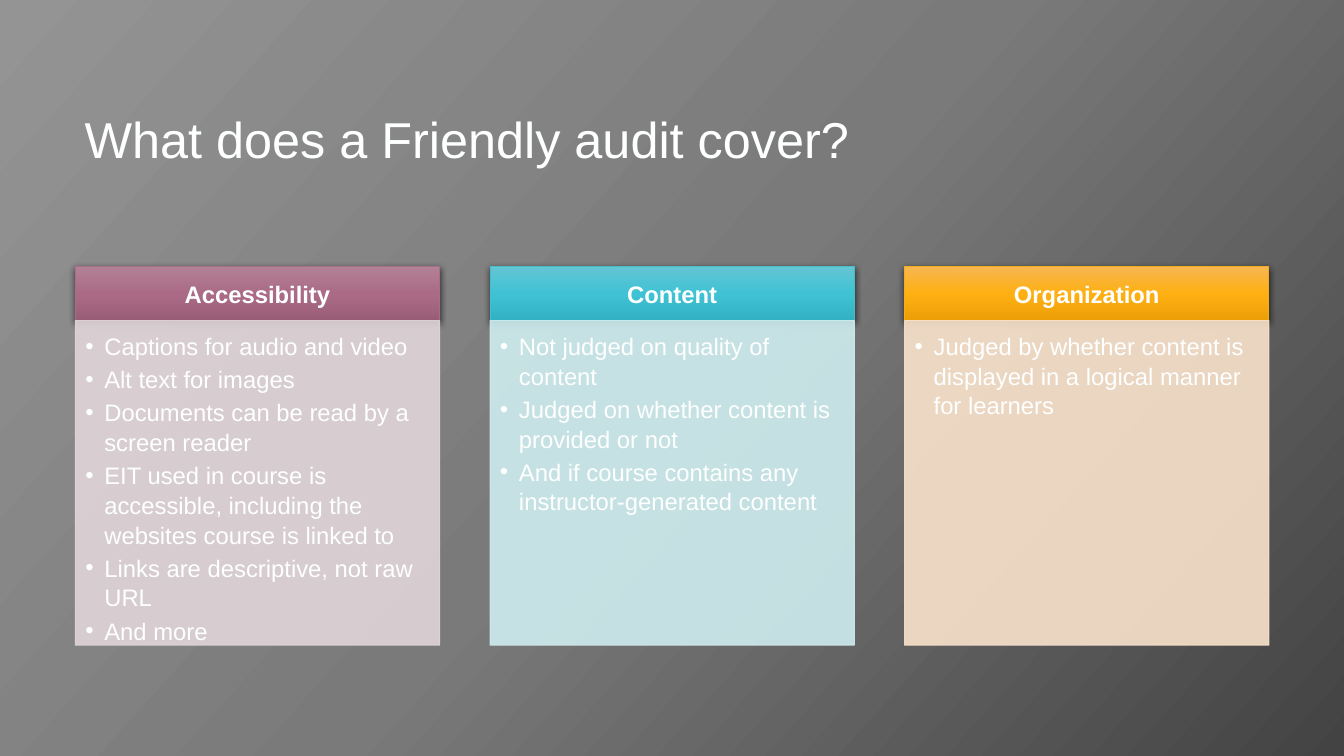
import pptx
import pptx.dml.color
import pptx.enum.shapes
import pptx.enum.text
import pptx.oxml
import pptx.oxml.ns
import pptx.util
from dataclasses import dataclass

Cm, Pt = pptx.util.Cm, pptx.util.Pt
qn = pptx.oxml.ns.qn
Anchor, Align = pptx.enum.text.MSO_ANCHOR, pptx.enum.text.PP_ALIGN

TITLE = "What does a Friendly audit cover?"
COLUMNS = [
    {"heading": "Accessibility",
     "points": ["Captions for audio and video",
                "Alt text for images",
                "Documents can be read by a screen reader",
                "EIT used in course is accessible, including the websites course is linked to",
                "Links are descriptive, not raw URL",
                "And more"],
     "gradient": ("B28195", "AB6B87", "9A5D77"), "edge": "A86E87", "tint": "E1D5D9"},
    {"heading": "Content",
     "points": ["Not judged on quality of content",
                "Judged on whether content is provided or not",
                "And if course contains any instructor-generated content"],
     "gradient": ("64C5D3", "3FC2D4", "32B1C2"), "edge": "46BDCD", "tint": "CFEDEF"},
    {"heading": "Organization",
     "points": ["Judged by whether content is displayed in a logical manner for learners"],
     "gradient": ("F7B652", "FEB012", "EB9F07"), "edge": "F3AC1D", "tint": "FAE3CC"},
]


@dataclass(frozen=True)
class Theme:
    font: str = "Arial"
    text: str = "FEFFFF"
    background: tuple = ("949494", "7A7A7A", "434343")
    title_size: int = 36
    body_size: int = 17
    edge_width: float = 0.75
    tint_opacity: int = 90


THEME = Theme()
LEFT, PITCH, WIDTH = 1.9, 10.45, 9.18
HEADER_TOP, HEADER_HEIGHT, BODY_HEIGHT = 6.72, 1.36, 8.18
BODY_TOP = HEADER_TOP + HEADER_HEIGHT


def rgb(code):
    return pptx.dml.color.RGBColor.from_string(code)


def xml(tag, content="", **attributes):
    settings = "".join(f' {name}="{value}"' for name, value in attributes.items())
    namespace = pptx.oxml.ns.nsdecls("a")
    return pptx.oxml.parse_xml(f"<a:{tag} {namespace}{settings}>{content}</a:{tag}>")


def paint_gradient(fill, element, colours, angle):
    """Spread the colours evenly; element is the XML that holds the fill."""
    fill.gradient()
    gradient = next(element.iter(qn("a:gradFill")))
    step = 100000 // (len(colours) - 1)
    stops = "".join(f'<a:gs pos="{index * step}"><a:srgbClr val="{code}"/></a:gs>'
                    for index, code in enumerate(colours))
    for child in list(gradient):
        gradient.remove(child)
    gradient.append(xml("gsLst", stops))
    gradient.append(xml("lin", ang=angle * 60000, scaled=0))


def add_text(para, text, size, bold=False):
    span = para.add_run()
    span.text = text
    span.font.name = THEME.font
    span.font.size = Pt(size)
    span.font.bold = bold
    span.font.color.rgb = rgb(THEME.text)


def add_panel(slide, left, top, height, edge, anchor, insets):
    box = slide.shapes.add_shape(pptx.enum.shapes.MSO_SHAPE.RECTANGLE,
                                 Cm(left), Cm(top), Cm(WIDTH), Cm(height))
    box.shadow.inherit = False
    box.line.color.rgb = rgb(edge)
    box.line.width = Pt(THEME.edge_width)
    frame = box.text_frame
    frame.word_wrap = True
    frame.vertical_anchor = anchor
    (frame.margin_left, frame.margin_top,
     frame.margin_right, frame.margin_bottom) = map(Cm, insets)
    return box


def add_header(slide, left, column):
    box = add_panel(slide, left, HEADER_TOP, HEADER_HEIGHT, column["edge"],
                    Anchor.MIDDLE, (0.33, 0.2, 0.33, 0.2))
    properties = box._element.spPr
    paint_gradient(box.fill, properties, column["gradient"], 90)
    shadow = '<a:srgbClr val="000000"><a:alpha val="63000"/></a:srgbClr>'
    properties.find(qn("a:effectLst")).append(
        xml("outerShdw", shadow, blurRad=Pt(4.5), dist=Pt(1.5), dir=90 * 60000,
            algn="ctr", rotWithShape=0))
    para = box.text_frame.paragraphs[0]
    para.alignment = Align.CENTER
    add_text(para, column["heading"], THEME.body_size, bold=True)


def add_body(slide, left, column):
    box = add_panel(slide, left, BODY_TOP, BODY_HEIGHT, column["tint"],
                    Anchor.TOP, (0.25, 0.25, 0.33, 0.38))
    box.fill.solid()
    box.fill.fore_color.rgb = rgb(column["tint"])
    for colour in box._element.spPr.iter(qn("a:srgbClr")):
        colour.append(xml("alpha", val=THEME.tint_opacity * 1000))
    frame = box.text_frame
    for index, point in enumerate(column["points"]):
        para = frame.add_paragraph() if index else frame.paragraphs[0]
        para.alignment = Align.LEFT
        para.line_spacing = 1.04
        para.space_after = Pt(2.5)
        properties = para._p.get_or_add_pPr()
        properties.set("marL", str(Cm(0.48)))
        properties.set("indent", str(-Cm(0.48)))
        properties.append(xml("buFont", typeface=THEME.font))
        properties.append(xml("buChar", char="•"))
        add_text(para, point, THEME.body_size)


def add_title(slide):
    title = slide.shapes.title
    title.left, title.top, title.width, title.height = map(Cm, (1.88, 2.08, 26.7, 3))
    frame = title.text_frame
    frame.word_wrap = True
    frame.vertical_anchor = Anchor.MIDDLE
    para = frame.paragraphs[0]
    para.alignment = Align.LEFT
    para.line_spacing = 0.9
    add_text(para, TITLE, THEME.title_size)


def main():
    deck = pptx.Presentation()
    deck.slide_width, deck.slide_height = Cm(33.87), Cm(19.05)
    slide = deck.slides.add_slide(deck.slide_layouts.get_by_name("Title Only"))
    paint_gradient(slide.background.fill, slide._element, THEME.background, 42)
    add_title(slide)
    for index, column in enumerate(COLUMNS):
        left = LEFT + index * PITCH
        add_header(slide, left, column)
        add_body(slide, left, column)
    deck.save("out.pptx")


if __name__ == "__main__":
    main()
